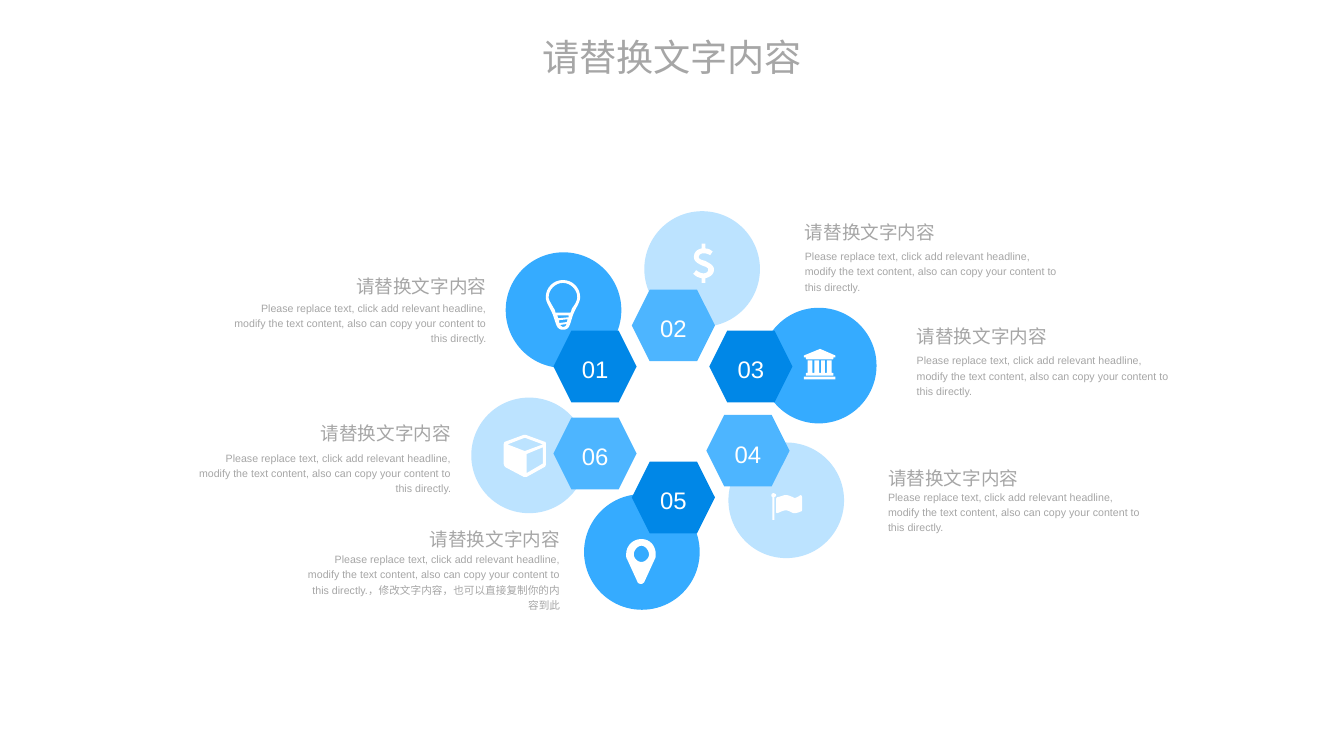
import pptx
import pptx.util
from pptx.dml.color import RGBColor
from pptx.enum.shapes import MSO_SHAPE
from pptx.enum.text import MSO_ANCHOR, MSO_AUTO_SIZE, PP_ALIGN

COLOURS = {"text": "A6A6A6", "white": "FFFFFF",
           "odd hexagon": "0087E7", "odd circle": "35ABFF",
           "even hexagon": "4DB5FF", "even circle": "BCE3FF"}
FONT = "Arial"
HEADING = "请替换文字内容"
BODY = ("Please replace text, click add relevant headline, modify the text content, "
        "also can copy your content to this directly.")
LONG_BODY = BODY + "，修改文字内容，也可以直接复制你的内容到此"

# number, hexagon corner, circle corner, text side, text edge, heading top, body top, body
STEPS = [
    ("01", (579, 346), (529, 264), "left", 509, 283, 313, BODY),
    ("02", (661, 303), (674, 221), "right", 842, 226, 259, BODY),
    ("03", (742, 346), (796, 322), "right", 959, 335, 368, BODY),
    ("04", (739, 434), (762, 463), "right", 929, 484, 511, BODY),
    ("05", (661, 483), (611, 517), "left", 586, 548, 576, LONG_BODY),
    ("06", (579, 437), (493, 416), "left", 472, 437, 470, BODY),
]

# Each icon is a list of closed outlines: (x, y) is a corner,
# (x1, y1, x2, y2, x, y) a cubic curve with its two control points.
BULB = [
    [(589, 293), (579, 293, 571, 301, 571, 311), (571, 317, 577, 324, 579, 331),
     (582, 339, 582, 345, 589, 345), (596, 345, 596, 340, 599, 331),
     (601, 324, 607, 317, 607, 311), (607, 301, 599, 293, 589, 293)],
    [(593, 337), (585, 338), (585, 335), (594, 334)],
    [(584, 333), (583, 330), (595, 330), (595, 332)],
    [(589, 342), (588, 342, 587, 341, 586, 340), (593, 339), (592, 341, 591, 342, 589, 342)],
    [(597, 327), (581, 327), (581, 325, 580, 323, 579, 322), (577, 318, 574, 314, 574, 311),
     (574, 303, 581, 296, 589, 296), (597, 296, 604, 303, 604, 311),
     (604, 314, 602, 318, 599, 322), (598, 323, 598, 325, 597, 327)],
]
DOLLAR = [
    [(738, 291), (738, 296), (734, 296), (734, 291), (728, 290, 726, 287, 726, 287),
     (725, 287, 725, 286, 726, 286), (728, 283), (729, 283), (729, 283, 732, 286, 736, 286),
     (738, 286, 741, 285, 741, 282), (741, 280, 738, 279, 735, 278),
     (731, 276, 726, 274, 726, 269), (726, 264, 729, 261, 734, 260), (734, 255), (738, 255),
     (738, 260), (743, 260, 745, 263, 745, 263), (746, 263, 746, 263, 745, 264), (743, 267),
     (743, 267, 740, 265, 736, 265), (733, 265, 731, 267, 731, 269),
     (731, 271, 734, 272, 738, 273), (741, 275, 747, 277, 747, 282),
     (747, 287, 743, 290, 738, 291)],
]
BANK = [
    [(874, 372), (874, 374), (872, 374), (872, 375, 872, 376, 871, 376), (844, 376),
     (843, 376, 843, 375, 843, 374), (841, 374), (841, 372), (858, 365)],
    [(874, 395), (874, 397), (841, 397), (841, 395), (841, 394, 841, 394, 842, 394), (873, 394),
     (874, 394, 874, 394, 874, 395)],
    [(850, 377), (850, 390), (852, 390), (852, 377), (857, 377), (857, 390), (859, 390),
     (859, 377), (863, 377), (863, 390), (865, 390), (865, 377), (870, 377), (870, 390),
     (871, 390), (872, 390, 872, 391, 872, 392), (872, 393), (843, 393), (843, 392),
     (843, 391, 843, 390, 844, 390), (845, 390), (845, 377)],
]
FLAG = [
    [(810, 520), (810, 544), (808, 544), (808, 520), (807, 520, 807, 519, 807, 518),
     (807, 517, 808, 516, 809, 516), (810, 516, 812, 517, 812, 518),
     (812, 519, 811, 520, 810, 520)],
    [(839, 534), (839, 534, 839, 535, 838, 535), (836, 536, 833, 537, 831, 537),
     (828, 537, 826, 534, 822, 534), (819, 534, 816, 536, 813, 537),
     (812, 537, 812, 536, 812, 536), (812, 522), (812, 521, 813, 520, 814, 520),
     (816, 520, 819, 518, 822, 518), (825, 518, 826, 519, 829, 520),
     (830, 520, 830, 521, 831, 521), (834, 521, 837, 518, 838, 518),
     (838, 518, 839, 519, 839, 520)],
]
PIN = [
    [(685, 585), (674, 609), (673, 610, 672, 611, 671, 611), (669, 611, 667, 610, 667, 609),
     (656, 585), (655, 584, 655, 581, 655, 580), (655, 571, 662, 564, 671, 564),
     (680, 564, 686, 571, 686, 580), (686, 581, 686, 584, 685, 585)],
    [(671, 571), (667, 571, 663, 576, 663, 580), (663, 584, 667, 588, 671, 588),
     (675, 588, 679, 584, 679, 580), (679, 576, 675, 571, 671, 571)],
]
BOX = [
    [(571, 485), (571, 487, 571, 488, 569, 489), (551, 499), (550, 499, 549, 499, 548, 499),
     (529, 489), (528, 488, 527, 487, 527, 485), (527, 465), (527, 463, 528, 462, 529, 462),
     (548, 455), (549, 455, 550, 455, 550, 455), (569, 462), (571, 462, 571, 463, 571, 465)],
    [(568, 465), (549, 458), (531, 465), (549, 472)],
    [(568, 485), (568, 468), (551, 475), (551, 495)],
]
ICONS = [BULB, DOLLAR, BANK, FLAG, PIN, BOX]

PX = 9144  # EMU in one px, at 100 px to the inch
CIRCLE = 121
HEXAGON = (87, 75)
HEADING_SIZE = (172, 28)
BODY_WIDTH, BODY_LINE = 266, 16
CURVE_STEPS = 8

deck = pptx.Presentation()
deck.slide_width, deck.slide_height = 1406 * PX, 791 * PX
slide = deck.slides.add_slide(deck.slide_layouts[6])


def paint(shape, colour):
    shape.shadow.inherit = False
    shape.fill.solid()
    shape.fill.fore_color.rgb = RGBColor.from_string(COLOURS[colour])
    shape.line.fill.background()


def add_preset(preset, corner, size, colour):
    shape = slide.shapes.add_shape(preset, *(n * PX for n in (*corner, *size)))
    paint(shape, colour)
    return shape


def write(frame, words, points, colour, align, spacing=1.2):
    paragraph = frame.paragraphs[0]
    paragraph.alignment = align
    paragraph.line_spacing = spacing
    run = paragraph.add_run()
    run.text = words
    run.font.size = pptx.util.Pt(points)
    run.font.name = FONT
    run.font.color.rgb = RGBColor.from_string(COLOURS[colour])


def add_label(words, box, points, align, wrap=True, spacing=1.2):
    frame = slide.shapes.add_textbox(*(n * PX for n in box)).text_frame
    frame.margin_left = frame.margin_top = frame.margin_right = frame.margin_bottom = 0
    frame.word_wrap = wrap
    frame.auto_size = MSO_AUTO_SIZE.SHAPE_TO_FIT_TEXT
    write(frame, words, points, "text", align, spacing)


def flatten(outline):
    """Turn corners and cubic curves into a list of EMU points."""
    points = [outline[0]]
    for part in outline[1:]:
        if len(part) == 2:
            points.append(part)
            continue
        controls = [points[-1], part[:2], part[2:4], part[4:]]
        for step in range(1, CURVE_STEPS + 1):
            t = step / CURVE_STEPS
            weights = ((1 - t) ** 3, 3 * t * (1 - t) ** 2, 3 * t * t * (1 - t), t ** 3)
            points.append(tuple(sum(w * c[axis] for w, c in zip(weights, controls))
                                for axis in (0, 1)))
    return [(x * PX, y * PX) for x, y in points]


def add_icon(outlines):
    first, *others = [flatten(outline) for outline in outlines]
    builder = slide.shapes.build_freeform(*first[0], scale=1.0)
    builder.add_line_segments(first[1:], close=True)
    for points in others:
        builder.move_to(*points[0])
        builder.add_line_segments(points[1:], close=True)
    paint(builder.convert_to_shape(), "white")


def parity(number):
    return "odd" if int(number) % 2 else "even"


for number, _, circle, *_ in STEPS:
    add_preset(MSO_SHAPE.OVAL, circle, (CIRCLE, CIRCLE), parity(number) + " circle")

for number, hexagon, *_ in STEPS:
    badge = add_preset(MSO_SHAPE.HEXAGON, hexagon, HEXAGON, parity(number) + " hexagon")
    badge.text_frame.vertical_anchor = MSO_ANCHOR.MIDDLE
    write(badge.text_frame, number, 18, "white", PP_ALIGN.CENTER)

for icon in ICONS:
    add_icon(icon)

for _, _, _, side, edge, heading_top, body_top, body in STEPS:
    on_left = side == "left"
    align = PP_ALIGN.RIGHT if on_left else PP_ALIGN.LEFT
    lines = 4 if body == LONG_BODY else 3
    add_label(body, (edge - BODY_WIDTH * on_left, body_top, BODY_WIDTH, lines * BODY_LINE),
              8, align)
    add_label(HEADING, (edge - HEADING_SIZE[0] * on_left, heading_top, *HEADING_SIZE),
              14, align, wrap=False)

add_label(HEADING, (547, 22, 312, 55), 28, PP_ALIGN.CENTER, spacing=1.3)

deck.save("out.pptx")
